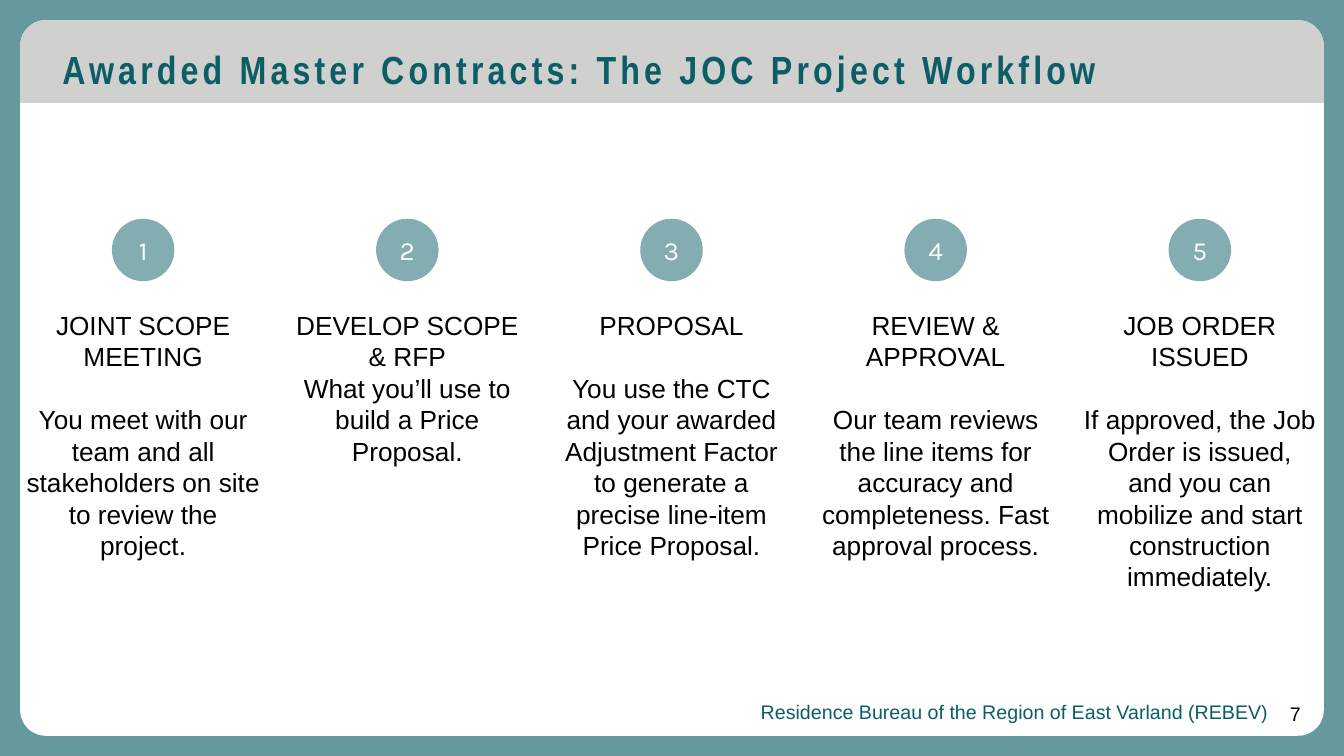
from pptx import Presentation
from pptx import util as u
from pptx.dml.color import RGBColor
from pptx.enum import shapes, text
from pptx.oxml.ns import qn
from lxml import etree

# Content
TITLE = "Awarded Master Contracts: The JOC Project Workflow"
AGENCY = "Residence Bureau of the Region of East Varland (REBEV)"
PAGE = "7"
# heading, description, gap between them in points
STEPS = [
    ("JOINT SCOPE MEETING",
     "You meet with our team and all stakeholders on site to review the project.", 22.4),
    ("DEVELOP SCOPE & RFP", "What you’ll use to build a Price Proposal.", 0),
    ("PROPOSAL",
     "You use the CTC and your awarded Adjustment Factor to generate a precise "
     "line-item Price Proposal.", 22.4),
    ("REVIEW & APPROVAL",
     "Our team reviews the line items for accuracy and completeness. "
     "Fast approval process.", 22.4),
    ("JOB ORDER ISSUED",
     "If approved, the Job Order is issued, and you can mobilize and start "
     "construction immediately.", 22.4),
]

THEME = {
    "frame": "65999E", "panel": "FFFFFF", "band": "D0D0CE",
    "accent": "0B5D66", "ink": "000000",
    "title_size": 28, "step_size": 18.7, "footer_size": 14,
    "title_font": "Arial Narrow", "body_font": "Arial", "number_font": "Karla",
}

# Layout
SLIDE_W, SLIDE_H = 13.33, 7.5
MARGIN = 0.2
BAND_H = 0.82
FIRST_CENTER, STEP_PITCH = 1.42, 2.62
CIRCLE_TOP, CIRCLE_SIZE = 2.17, 0.62
STEP_TOP, STEP_W, STEP_H = 3.02, 2.5, 3
STEP_INSET = 0.09

deck = Presentation()
deck.slide_width, deck.slide_height = u.Inches(SLIDE_W), u.Inches(SLIDE_H)
slide = deck.slides.add_slide(deck.slide_layouts[6])


def add_panel(kind, box, fill, radii=()):
    panel = slide.shapes.add_shape(kind, *map(u.Inches, box))
    panel.shadow.inherit = False
    panel.fill.solid()
    panel.fill.fore_color.rgb = RGBColor.from_string(THEME[fill])
    panel.line.fill.background()
    for corner, radius in enumerate(radii):
        panel.adjustments[corner] = radius
    return panel


def set_insets(frame, side, vertical):
    insets = {"margin_left": side, "margin_right": side,
              "margin_top": vertical, "margin_bottom": vertical}
    for name, value in insets.items():
        setattr(frame, name, u.Inches(value))


def write(paragraph, words, size, font, color, bold=False, **layout):
    run = paragraph.add_run()
    run.text = words
    formats = {"size": u.Pt(THEME[size]), "name": THEME[font], "bold": bold}
    for name, value in formats.items():
        setattr(run.font, name, value)
    run.font.color.rgb = RGBColor.from_string(THEME[color])
    for name, value in layout.items():
        setattr(paragraph, name, value)
    return run


def add_frame(box, side=0.1):
    frame = slide.shapes.add_textbox(*map(u.Inches, box)).text_frame
    frame.word_wrap = True
    set_insets(frame, side, 0.05)
    return frame


# Frame, white panel and title band
inner_w = SLIDE_W - 2 * MARGIN
PRESET = shapes.MSO_SHAPE
add_panel(PRESET.RECTANGLE, (0, 0, SLIDE_W, SLIDE_H), "frame")
add_panel(PRESET.ROUNDED_RECTANGLE,
          (MARGIN, MARGIN, inner_w, SLIDE_H - 2 * MARGIN), "panel", [0.036])
add_panel(PRESET.ROUND_2_SAME_RECTANGLE,
          (MARGIN, MARGIN, inner_w, BAND_H), "band", [0.315, 0])

# Title
title = add_frame((0.52, 0.45, 12.27, 0.62)).paragraphs[0]
title_run = write(title, TITLE, "title_size", "title_font", "accent", bold=True,
                  line_spacing=0.9, space_before=u.Pt(10))
title_run.font._element.set("spc", "300")

# Footer
ALIGN = text.PP_ALIGN
for words, box, color in [(PAGE, (12.23, 6.91, 0.77, 0.33), "ink"),
                          (AGENCY, (0.58, 6.89, 12.1, 0.23), "accent")]:
    write(add_frame(box).paragraphs[0], words, "footer_size", "body_font", color,
          alignment=ALIGN.RIGHT)

# Workflow steps
for index, (heading, description, gap) in enumerate(STEPS):
    center = FIRST_CENTER + index * STEP_PITCH

    circle = add_panel(PRESET.OVAL, (center - CIRCLE_SIZE / 2, CIRCLE_TOP,
                                     CIRCLE_SIZE, CIRCLE_SIZE), "frame")
    tint = circle.fill._xPr.find(qn("a:solidFill"))[0]
    etree.SubElement(tint, qn("a:alpha"), val="80000")
    number = circle.text_frame
    number.vertical_anchor = text.MSO_ANCHOR.MIDDLE
    set_insets(number, 0, 0)
    write(number.paragraphs[0], str(index + 1), "step_size", "number_font", "panel",
          alignment=ALIGN.CENTER)

    step = add_frame((center - STEP_W / 2, STEP_TOP, STEP_W, STEP_H), STEP_INSET)
    for paragraph, words, space in [(step.paragraphs[0], heading, 0),
                                    (step.add_paragraph(), description, gap)]:
        write(paragraph, words, "step_size", "body_font", "ink",
              alignment=ALIGN.CENTER, space_before=u.Pt(space))

deck.save("out.pptx")
